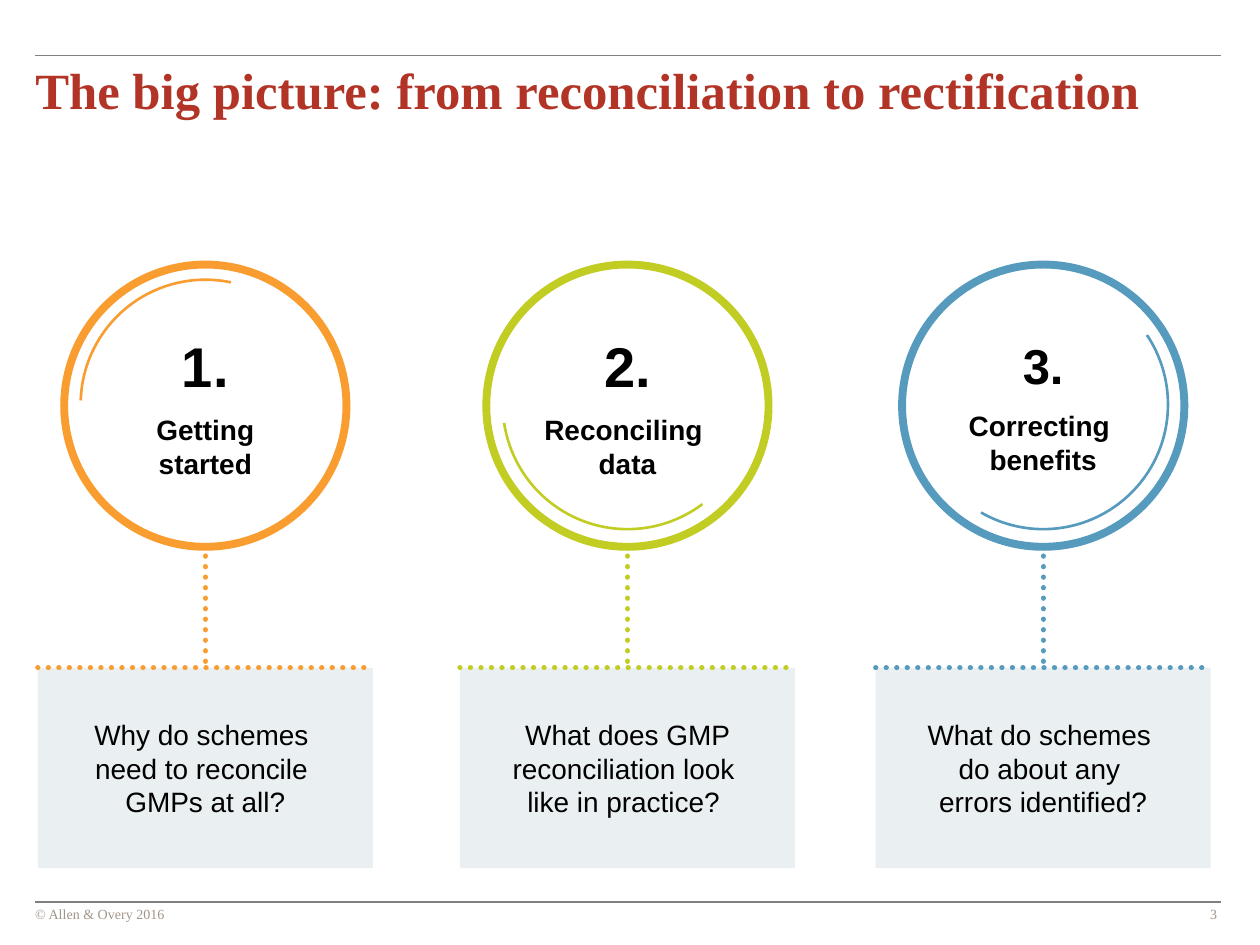
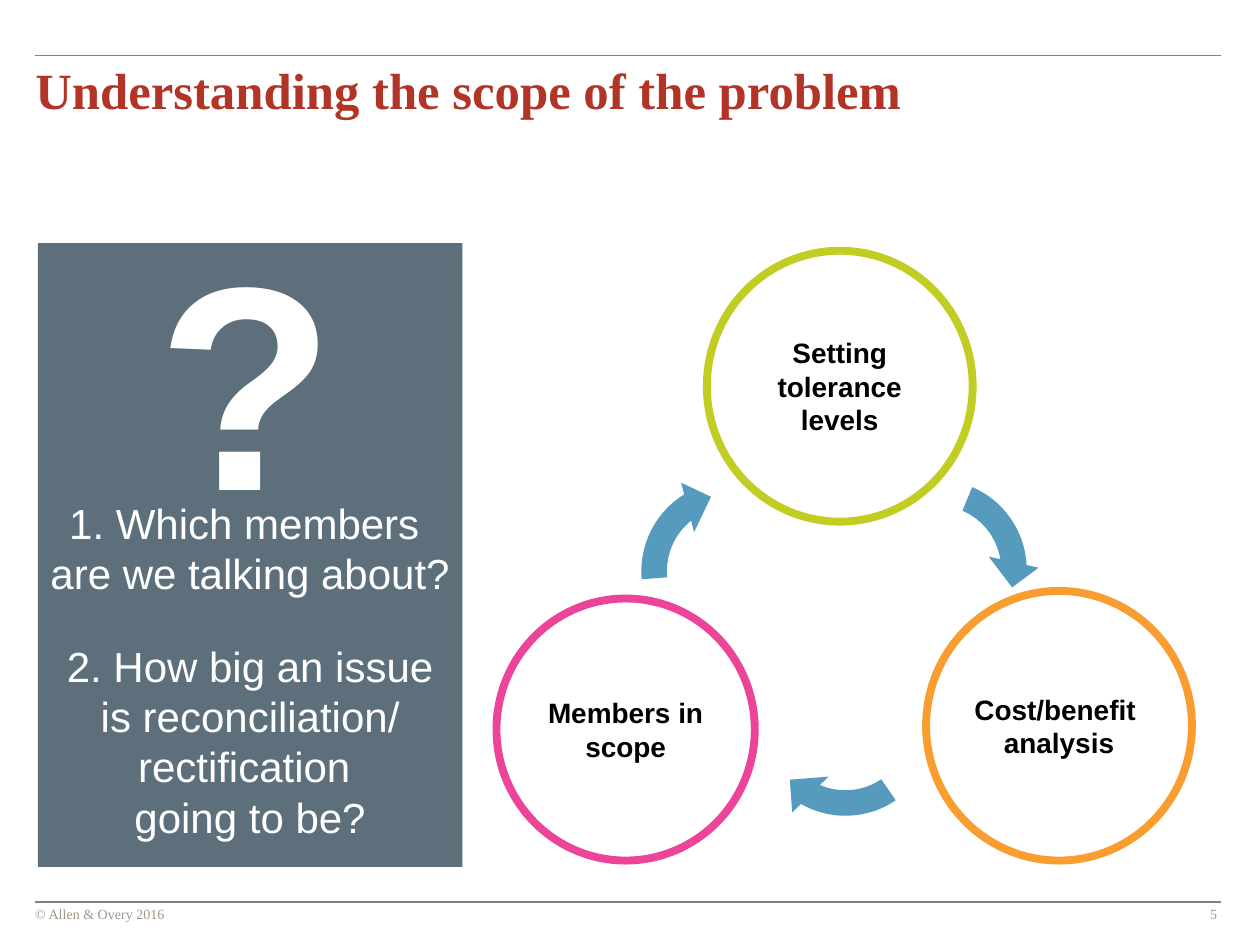
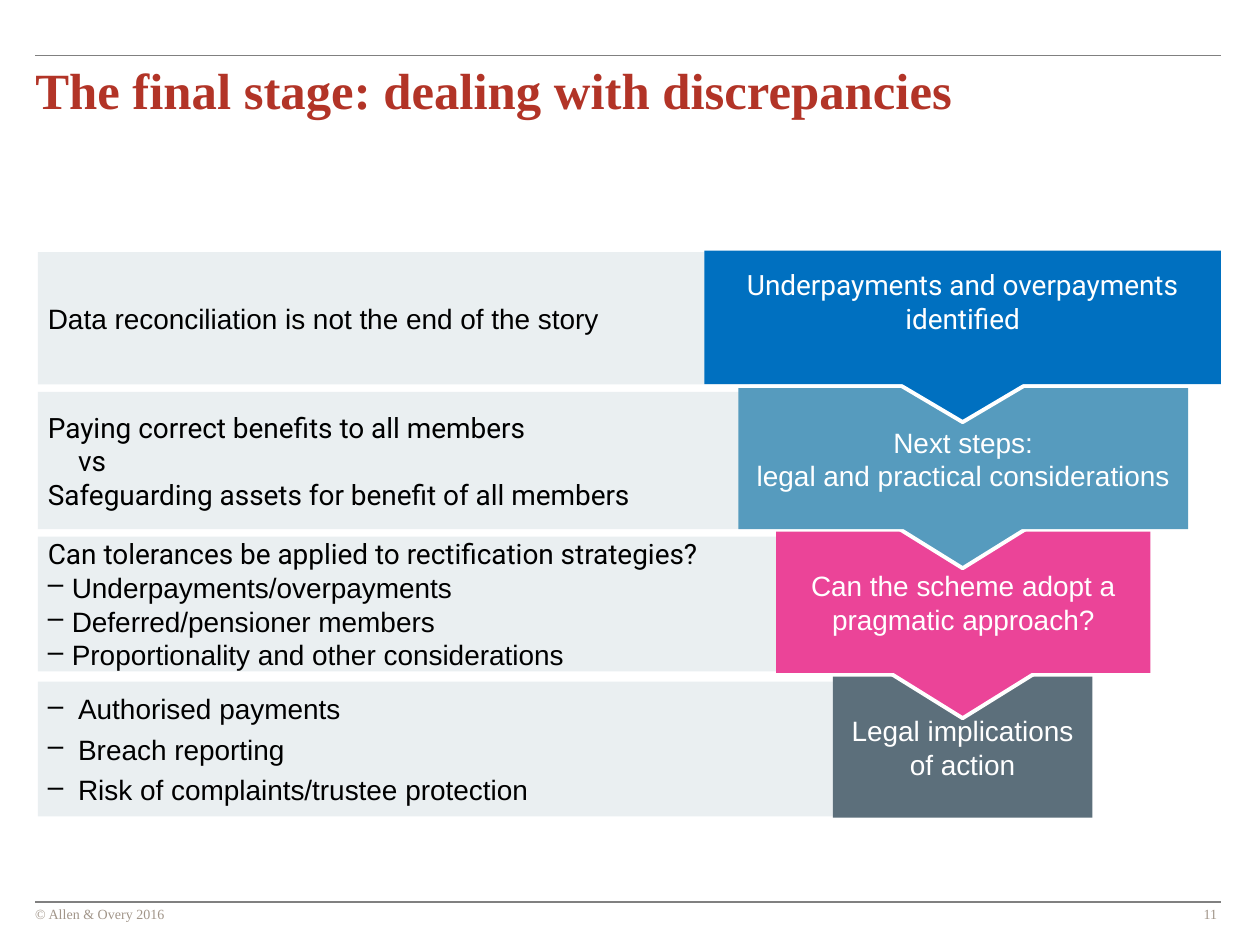
"""Build three slides on reconciling and rectifying pension scheme records."""
from dataclasses import dataclass

import lxml.etree
import pptx
import pptx.dml.color
import pptx.enum.dml
import pptx.enum.shapes
import pptx.enum.text
import pptx.oxml.ns
import pptx.util

EMU_PER_PX = 9144
DEGREE = 0.6
ARIAL, ROBOTO, TIMES = "Arial", "Roboto", "Times New Roman"
WHITE, BLACK, RED, RULE_GREY, FOOTER_GREY = "FFFFFF", "000000", "B23427", "808080", "A19589"
ORANGE, LIME, STEEL, PINK = "F99D31", "C2CD23", "569BBE", "EB4498"
SLATE, PALE, BLUE = "5C6F7B", "EAEFF1", "0070C0"

Shape = pptx.enum.shapes.MSO_SHAPE
Align = pptx.enum.text.PP_ALIGN
Anchor = pptx.enum.text.MSO_ANCHOR


@dataclass(frozen=True)
class Line:
    """One paragraph and its format."""
    text: str
    size: int = 16
    font: str = ARIAL
    color: str = BLACK
    bold: bool = False
    align: Align = Align.CENTER
    before: int = 0
    margin: int = 0
    bullet: str = ""


@dataclass(frozen=True)
class Box:
    """A frame in px."""
    left: int
    top: int
    width: int
    height: int


@dataclass(frozen=True)
class Step:
    """A numbered circle with a question below it."""
    center: int
    number: str
    number_size: int
    name: str
    question: str
    color: str
    arc: tuple[float, float]


@dataclass(frozen=True)
class Topic:
    """A circle in the cycle."""
    box: Box
    text: str
    color: str
    wrap: bool = True


@dataclass(frozen=True)
class Stage:
    """A block of the funnel with the height of its pointer."""
    top: int
    width: int
    height: int
    color: str
    lines: list[Line]
    pointer_top: int = 0
    pointer_height: int = 0
    inset_bottom: int = 5


@dataclass(frozen=True)
class Band:
    """A pale band of notes beside a stage."""
    top: int
    width: int
    height: int
    lines: list[Line]


def px(length: int) -> pptx.util.Emu:
    """Turn px into EMU."""
    return pptx.util.Emu(length * EMU_PER_PX)


def rgb(color: str) -> pptx.dml.color.RGBColor:
    """Turn a hex string into a colour."""
    return pptx.dml.color.RGBColor.from_string(color)


def frame(box: Box) -> list[pptx.util.Emu]:
    """Return a box as EMU lengths."""
    return [px(length) for length in (box.left, box.top, box.width, box.height)]


def write(shape, lines: list[Line], insets=(10, 5, 10, 5), anchor=Anchor.MIDDLE, wrap=True) -> None:
    """Fill the text frame of a shape."""
    text_frame = shape.text_frame
    text_frame.auto_size = pptx.enum.text.MSO_AUTO_SIZE.NONE
    text_frame.word_wrap = wrap
    text_frame.vertical_anchor = anchor
    (text_frame.margin_left, text_frame.margin_top,
     text_frame.margin_right, text_frame.margin_bottom) = map(px, insets)
    for index, line in enumerate(lines):
        paragraph = text_frame.add_paragraph() if index else text_frame.paragraphs[0]
        paragraph.text = line.text
        paragraph.alignment = line.align
        paragraph.space_before = pptx.util.Pt(line.before)
        properties = paragraph._p.get_or_add_pPr()
        if line.margin:
            properties.set("marL", str(px(line.margin)))
        if line.bullet:
            properties.set("indent", str(px(-line.margin)))
            bullet = lxml.etree.SubElement(properties, pptx.oxml.ns.qn("a:buChar"))
            bullet.set("char", line.bullet)
        for run in paragraph.runs:
            run.font.size = pptx.util.Pt(line.size)
            run.font.name = line.font
            run.font.bold = line.bold
            run.font.color.rgb = rgb(line.color)


def add_shape(slide, kind: Shape, box: Box, fill: str = "", outline: str = "",
              weight: float = 4.5, rotation: float = 0, adjustments: tuple[float, ...] = ()):
    """Draw a preset shape without shadow."""
    shape = slide.shapes.add_shape(kind, *frame(box))
    shape.shadow.inherit = False
    shape.rotation = rotation
    for index, value in enumerate(adjustments):
        shape.adjustments[index] = value
    if fill:
        shape.fill.solid()
        shape.fill.fore_color.rgb = rgb(fill)
    else:
        shape.fill.background()
    if outline:
        shape.line.color.rgb = rgb(outline)
        shape.line.width = pptx.util.Pt(weight)
    else:
        shape.line.fill.background()
    return shape


def add_line(slide, start: tuple[int, int], end: tuple[int, int], color: str,
             weight: float = 1, dotted: bool = False) -> None:
    """Draw a straight line, with round dots if asked."""
    connector = slide.shapes.add_connector(
        pptx.enum.shapes.MSO_CONNECTOR.STRAIGHT, *map(px, start + end))
    connector.line.color.rgb = rgb(color)
    connector.line.width = pptx.util.Pt(weight)
    properties = connector.element.spPr
    if dotted:
        connector.line.dash_style = pptx.enum.dml.MSO_LINE.ROUND_DOT
        properties.find(pptx.oxml.ns.qn("a:ln")).set("cap", "rnd")
    lxml.etree.SubElement(properties, pptx.oxml.ns.qn("a:effectLst"))


def add_text(slide, box: Box, line: Line, wrap: bool = True) -> None:
    """Add a text box with one paragraph and no insets."""
    write(slide.shapes.add_textbox(*frame(box)), [line], (0, 0, 0, 0), Anchor.TOP, wrap)


def add_slide(presentation, title: str, number: int):
    """Add a slide with its title, rules and footer."""
    slide = presentation.slides.add_slide(presentation.slide_layouts[5])
    for height in (44, 716):
        add_line(slide, (28, height), (969, height), RULE_GREY)
    for left, text, align in ((28, "© Allen & Overy 2016", Align.LEFT),
                              (249, str(number), Align.RIGHT)):
        add_text(slide, Box(left, 719, 717, 13), Line(text, 8, TIMES, FOOTER_GREY, align=align))
    heading = slide.shapes.title
    heading.left, heading.top, heading.width, heading.height = frame(Box(28, 46, 937, 49))
    write(heading, [Line(title, 29, TIMES, RED, True, Align.LEFT)], (0, 1, 0, 0), Anchor.TOP)
    return slide


STEPS = [
    Step(163, "1.", 32, "Getting\nstarted", "Why do schemes \nneed to reconcile \nGMPs at all?",
         ORANGE, (181.82, 281.81)),
    Step(498, "2.", 32, "Reconciling \ndata",
         "What does GMP reconciliation look \nlike in practice? ", LIME, (53.04, 171.48)),
    Step(828, "3.", 28, "Correcting \nbenefits",
         "What do schemes \ndo about any \nerrors identified?", STEEL, (326.18, 119.94)),
]


def add_big_picture(presentation) -> None:
    """Draw the three steps."""
    slide = add_slide(presentation, "The big picture: from reconciliation to rectification", 3)
    for step in STEPS:
        circle = add_shape(slide, Shape.OVAL, Box(step.center - 112, 210, 224, 224),
                           WHITE, step.color)
        write(circle, [Line(step.number, step.number_size, bold=True),
                       Line(step.name, bold=True, before=8)], wrap=False)
        left, right = step.center - 133, step.center + 133
        question = add_shape(slide, Shape.RECTANGLE, Box(left, 530, 266, 159), PALE)
        write(question, [Line(step.question)])
        add_line(slide, (step.center, 433), (step.center, 530), step.color, 3, True)
        add_line(slide, (left, 530), (right, 530), step.color, 3, True)
        add_shape(slide, Shape.ARC, Box(step.center - 99, 222, 198, 198), outline=step.color,
                  weight=1.5, adjustments=tuple(angle * DEGREE for angle in step.arc))


TOPICS = [
    Topic(Box(561, 199, 211, 215), "Setting tolerance levels", LIME),
    Topic(Box(394, 475, 205, 208), "Members in scope", PINK),
    Topic(Box(735, 469, 211, 214), "Cost/benefit \nanalysis", ORANGE, False),
]
ARROWS = [
    (Box(498, 373, 164, 162), 255.3),
    (Box(663, 371, 162, 164), 12.6),
    (Box(589, 494, 162, 164), 135.3),
]
ARROW_FORM = (0.125, 19.04 * DEGREE, 340.96 * DEGREE, 280.01 * DEGREE, 0.125)


def add_scope(presentation) -> None:
    """Draw the question panel and the cycle."""
    slide = add_slide(presentation, "Understanding the scope of the problem", 5)
    for topic in TOPICS:
        circle = add_shape(slide, Shape.OVAL, topic.box, WHITE, topic.color)
        write(circle, [Line(topic.text, bold=True)], wrap=topic.wrap)
    for box, rotation in ARROWS:
        add_shape(slide, Shape.CIRCULAR_ARROW, box, STEEL, rotation=rotation,
                  adjustments=ARROW_FORM)
    panel = add_shape(slide, Shape.RECTANGLE, Box(30, 193, 337, 495), SLATE)
    write(panel, [
        Line("1. Which members \nare we talking about?", 24, color=WHITE),
        Line("2. How big an issue\nis reconciliation/\nrectification \ngoing to be?", 24,
             color=WHITE, before=24),
    ], (10, 20, 10, 20), Anchor.BOTTOM, False)
    add_text(slide, Box(125, 159, 123, 197),
             Line("?", 166, color=WHITE, bold=True, align=Align.LEFT), False)


def note(text: str, font: str = ARIAL, before: int = 0, margin: int = 0, bullet: str = "") -> Line:
    """Return a left-aligned line for a band."""
    return Line(text, font=font, align=Align.LEFT, before=before, margin=margin, bullet=bullet)


BANDS = [
    Band(200, 565, 105, [note("Data reconciliation is not the end of the story")]),
    Band(311, 565, 109, [
        note("Paying correct benefits to all members", ROBOTO),
        note("vs", ROBOTO, margin=24),
        note("Safeguarding assets for benefit of all members", ROBOTO)]),
    Band(426, 639, 107, [
        note("Can tolerances be applied to rectification strategies?", ROBOTO),
        *(note(text, margin=19, bullet="–") for text in (
            "Underpayments/overpayments", "Deferred/pensioner members",
            "Proportionality and other considerations"))]),
    Band(541, 649, 107, [
        note(text, before=4 if index else 0, margin=24, bullet="–")
        for index, text in enumerate((
            "Authorised payments", "Breach reporting",
            "Risk of complaints/trustee protection"))]),
]
STAGES = [
    Stage(199, 410, 106, BLUE, [
        Line("Underpayments and overpayments identified", font=ROBOTO, color=WHITE)], 296, 39, 31),
    Stage(308, 357, 112, STEEL, [
        Line("Next steps:", color=WHITE),
        Line("legal and practical considerations", color=WHITE)], 410, 41),
    Stage(422, 297, 112, PINK, [
        Line("Can the scheme adopt a pragmatic approach?", color=WHITE)], 529, 41),
    Stage(537, 206, 112, SLATE, [Line("Legal implications of action", color=WHITE)]),
]
FUNNEL_CENTER = 764
POINTER_WIDTH = 132


def add_final_stage(presentation) -> None:
    """Draw the bands and the funnel, from the lowest stage up."""
    slide = add_slide(presentation, "The final stage: dealing with discrepancies", 11)
    for band in BANDS:
        shape = add_shape(slide, Shape.RECTANGLE, Box(30, band.top, band.width, band.height), PALE)
        write(shape, band.lines, (8, 8, 8, 8))
    for stage in reversed(STAGES):
        if stage.pointer_height:
            pointer = Box(FUNNEL_CENTER - POINTER_WIDTH // 2, stage.pointer_top,
                          POINTER_WIDTH, stage.pointer_height)
            add_shape(slide, Shape.ISOSCELES_TRIANGLE, pointer, stage.color, WHITE, 2.25, 180)
        block = Box(FUNNEL_CENTER - stage.width // 2, stage.top, stage.width, stage.height)
        shape = add_shape(slide, Shape.RECTANGLE, block, stage.color)
        write(shape, stage.lines, (10, 5, 10, stage.inset_bottom))


def main() -> None:
    """Build and save the presentation."""
    presentation = pptx.Presentation()
    presentation.slide_width, presentation.slide_height = px(1000), px(750)
    add_big_picture(presentation)
    add_scope(presentation)
    add_final_stage(presentation)
    presentation.save("out.pptx")


if __name__ == "__main__":
    main()
